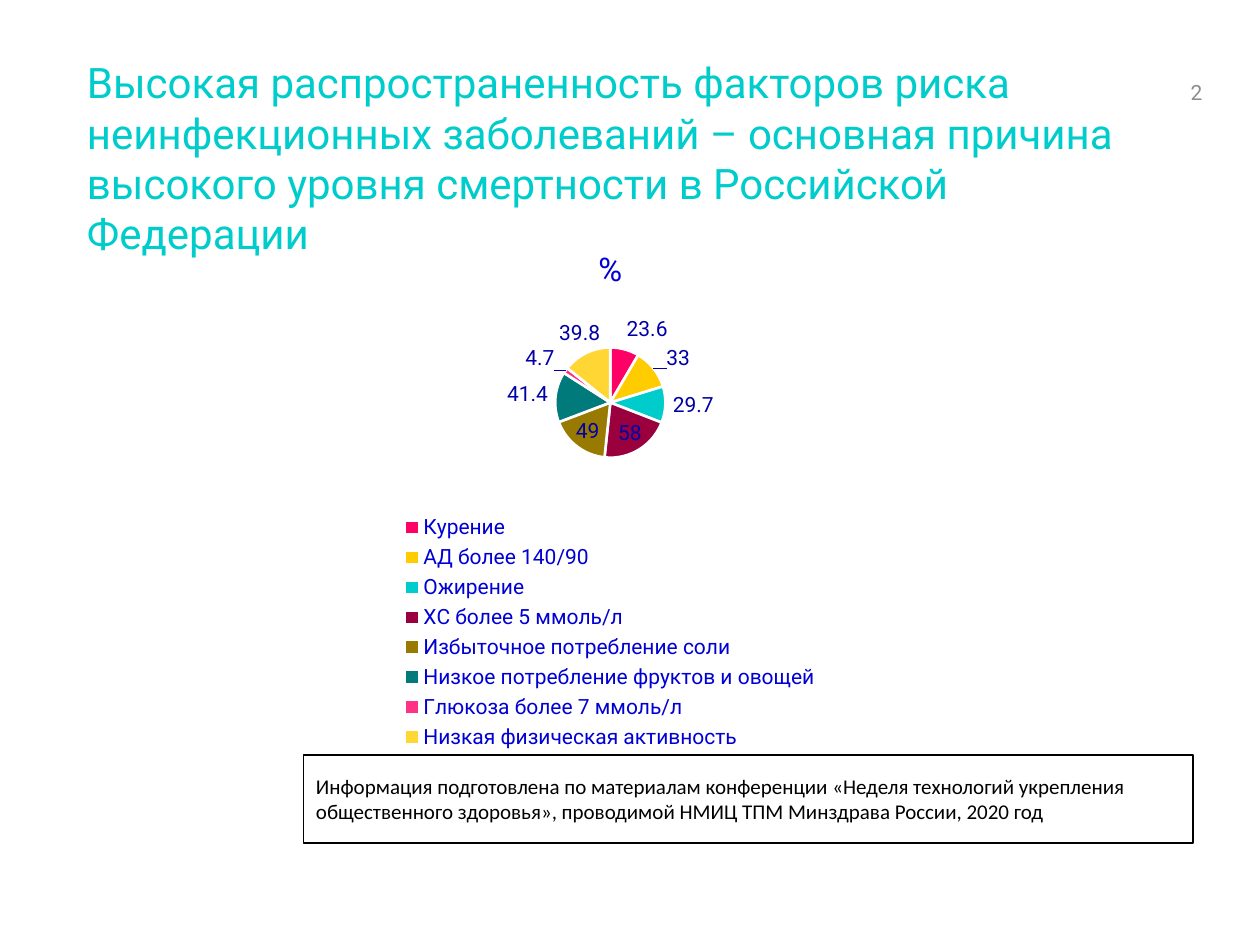
"""Build a slide on the prevalence of risk factors for noncommunicable diseases."""
from pptx import Presentation
from pptx.chart.data import CategoryChartData
from pptx.dml.color import RGBColor
from pptx.enum.chart import XL_CHART_TYPE, XL_LABEL_POSITION, XL_LEGEND_POSITION
from pptx.enum.shapes import MSO_SHAPE
from pptx.enum.text import MSO_ANCHOR, MSO_AUTO_SIZE, PP_ALIGN
from pptx.util import Inches, Pt


def style_font(font, size, color, name="Roboto"):
    font.size = Pt(size)
    font.name = name
    font.bold = False
    font.color.rgb = RGBColor.from_string(color)


def write_text(box, text, size, color, name="Roboto", anchor=MSO_ANCHOR.TOP,
               side=0.1, edge=0.05, wrap=True):
    frame = box.text_frame
    frame.auto_size = MSO_AUTO_SIZE.NONE
    frame.word_wrap = wrap
    frame.vertical_anchor = anchor
    frame.margin_left = frame.margin_right = Inches(side)
    frame.margin_top = frame.margin_bottom = Inches(edge)
    para = frame.paragraphs[0]
    para.alignment = PP_ALIGN.LEFT
    span = para.add_run()
    span.text = text
    style_font(span.font, size, color, name)


deck = Presentation()
deck.slide_width, deck.slide_height = Inches(10), Inches(7.5)
page = deck.slides.add_slide(deck.slide_layouts[5])

title = page.shapes.title
title.left, title.top = Inches(0.69), Inches(0.4)
title.width, title.height = Inches(8.62), Inches(1.03)
write_text(title, "Высокая распространенность факторов риска неинфекционных "
           "заболеваний – основная причина высокого уровня смертности в "
           "Российской Федерации", 24, "00CCCC", side=0)

number = page.shapes.add_textbox(Inches(9.45), Inches(0.4), Inches(0.38), Inches(0.47))
write_text(number, "2", 12, "8C8C90", anchor=MSO_ANCHOR.BOTTOM,
           side=0, edge=0.04, wrap=False)

risk_factors = [
    ("Курение", 23.6, "FF0066"),
    ("АД более 140/90", 33, "FFCC00"),
    ("Ожирение", 29.7, "00CCCC"),
    ("ХС более 5 ммоль/л", 58, "99003D"),
    ("Избыточное потребление соли", 49, "997A00"),
    ("Низкое потребление фруктов и овощей", 41.4, "007A7A"),
    ("Глюкоза более 7 ммоль/л", 4.7, "FF3385"),
    ("Низкая физическая активность", 39.8, "FFD633"),
]
chart_data = CategoryChartData()
chart_data.categories = [factor for factor, value, color in risk_factors]
chart_data.add_series("%", [value for factor, value, color in risk_factors])
chart = page.shapes.add_chart(XL_CHART_TYPE.PIE, Inches(1.54), Inches(1.78),
                              Inches(6.61), Inches(4.21), chart_data).chart
style_font(chart.font, 10, "000033")

chart.has_title = True
chart.chart_title.include_in_layout = False
heading = chart.chart_title.text_frame.paragraphs[0].add_run()
heading.text = "%"
style_font(heading.font, 18.6, "0000D4")

chart.has_legend = True
chart.legend.position = XL_LEGEND_POSITION.BOTTOM
chart.legend.include_in_layout = False
style_font(chart.legend.font, 12, "0000D4")

pie = chart.plots[0]
pie.vary_by_categories = True
series = pie.series[0]
for index, (factor, value, color) in enumerate(risk_factors):
    wedge = series.points[index].format
    wedge.fill.solid()
    wedge.fill.fore_color.rgb = RGBColor.from_string(color)
    wedge.line.color.rgb = RGBColor.from_string("FFFFFF")
    wedge.line.width = Pt(1.5)

labels = series.data_labels
labels.show_value = True
labels.show_percentage = False
labels.number_format = "General"
labels.number_format_is_linked = False
labels.position = XL_LABEL_POSITION.BEST_FIT
style_font(labels.font, 12, "0000A6")

source_note = page.shapes.add_shape(MSO_SHAPE.RECTANGLE, Inches(2.41), Inches(5.99),
                                    Inches(7.06), Inches(0.7))
source_note.shadow.inherit = False
source_note.fill.solid()
source_note.fill.fore_color.rgb = RGBColor.from_string("FFFFFF")
source_note.line.color.rgb = RGBColor.from_string("000000")
source_note.line.width = Pt(1)
write_text(source_note, "Информация подготовлена по материалам конференции «Неделя "
           "технологий укрепления общественного здоровья», проводимой НМИЦ ТПМ "
           "Минздрава России, 2020 год", 12, "000000", name="Calibri",
           anchor=MSO_ANCHOR.MIDDLE)

deck.save("out.pptx")
